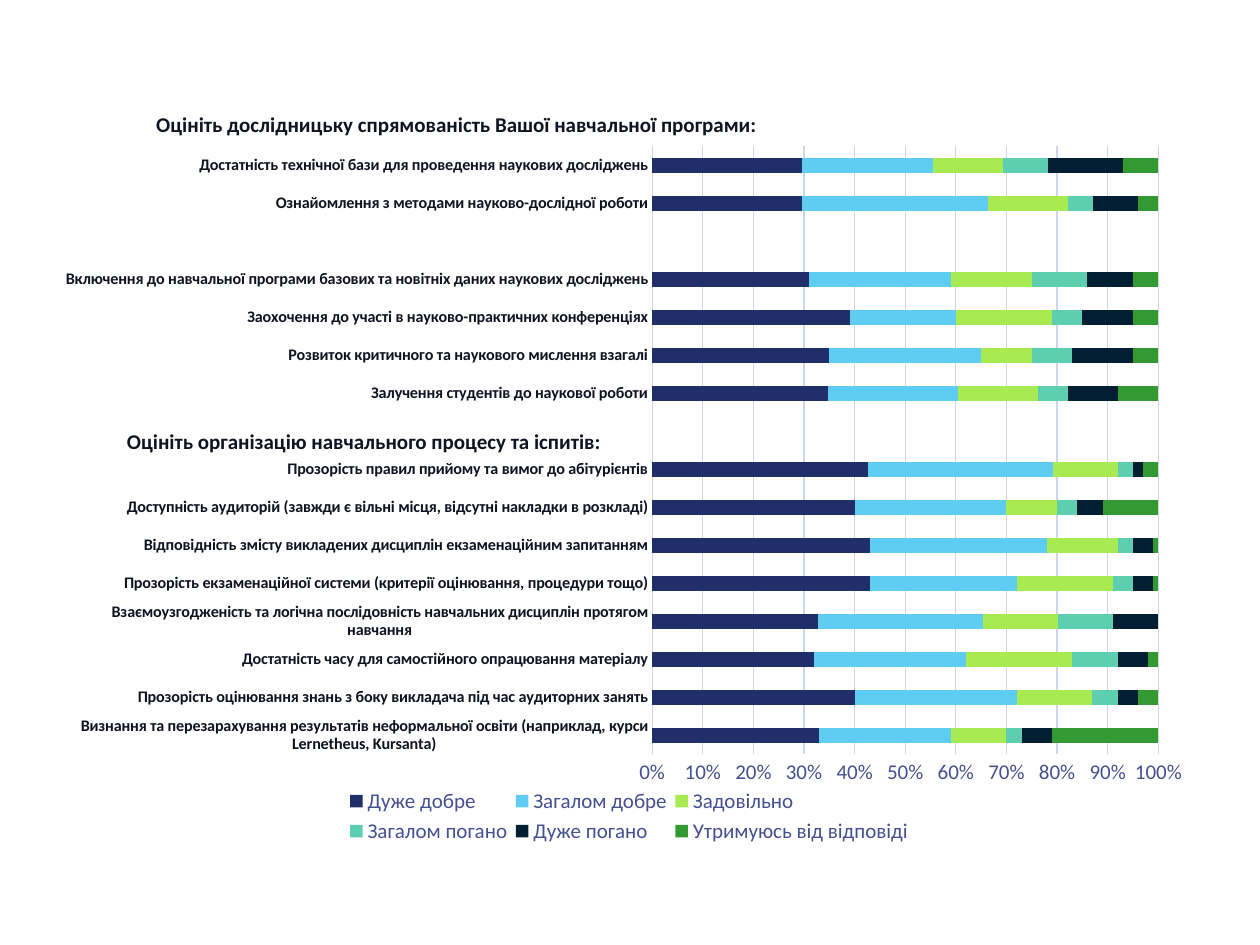
import pptx
import pptx.chart.data
import pptx.dml.color
import pptx.enum.chart
import pptx.oxml
import pptx.oxml.ns
import pptx.util

Cm = pptx.util.Cm
Pt = pptx.util.Pt
INK, MUTED, GRID = "101322", "44508F", "D0D4E9"


def color(hex_value):
    return pptx.dml.color.RGBColor.from_string(hex_value)


def add_text(text, left, top, width, height, size=12, ink=INK, bold=True):
    box = slide.shapes.add_textbox(Cm(left), Cm(top), Cm(width), Cm(height))
    box.text_frame.word_wrap = True
    run = box.text_frame.paragraphs[0].add_run()
    run.text = text
    run.font.name = "Calibri"
    run.font.size = Pt(size)
    run.font.bold = bold
    run.font.color.rgb = color(ink)


deck = pptx.Presentation()
deck.slide_width, deck.slide_height = Cm(25.4), Cm(19.05)
slide = deck.slides.add_slide(deck.slide_layouts[6])

# Questions run from the bottom of the chart to the top; empty ones separate groups
questions = [
    "Визнання та перезарахування результатів неформальної освіти (наприклад, курси Lernetheus, Kursanta)",
    "Прозорість оцінювання знань з боку викладача під час аудиторних занять",
    "Достатність часу для самостійного опрацювання матеріалу",
    "Взаємоузгодженість та логічна послідовність навчальних дисциплін протягом навчання",
    "Прозорість екзаменаційної системи (критерії оцінювання, процедури тощо)",
    "Відповідність змісту викладених дисциплін екзаменаційним запитанням",
    "Доступність аудиторій (завжди є вільні місця, відсутні накладки в розкладі)",
    "Прозорість правил прийому та вимог до абітурієнтів",
    "",
    "Залучення студентів до наукової роботи",
    "Розвиток критичного та наукового мислення взагалі",
    "Заохочення до участі в науково-практичних конференціях",
    "Включення до навчальної програми базових та новітніх даних наукових досліджень",
    "",
    "Ознайомлення з методами науково-дослідної роботи",
    "Достатність технічної бази для проведення наукових досліджень",
]
answers = [
    ("Дуже добре", "202F6A",
     [33, 40, 32, 33, 43, 43, 40, 43, None, 35, 35, 39, 31, None, 30, 30]),
    ("Загалом добре", "5ECCF3",
     [26, 32, 30, 33, 29, 35, 30, 37, None, 26, 30, 21, 28, None, 37, 26]),
    ("Задовільно", "A7EA52",
     [11, 15, 21, 15, 19, 14, 10, 13, None, 16, 10, 19, 16, None, 16, 14]),
    ("Загалом погано", "5DCEAF",
     [3, 5, 9, 11, 4, 3, 4, 3, None, 6, 8, 6, 11, None, 5, 9]),
    ("Дуже погано", "021E32",
     [6, 4, 6, 9, 4, 4, 5, 2, None, 10, 12, 10, 9, None, 9, 15]),
    ("Утримуюсь від відповіді", "339933",
     [21, 4, 2, 0, 1, 1, 11, 3, None, 8, 5, 5, 5, None, 4, 7]),
]
survey = pptx.chart.data.CategoryChartData()
survey.categories = questions
for answer, _, shares in answers:
    survey.add_series(answer, shares)

chart = slide.shapes.add_chart(
    pptx.enum.chart.XL_CHART_TYPE.BAR_STACKED_100,
    Cm(1.09), Cm(2.51), Cm(23.19), Cm(14.6), survey).chart
chart.has_title = False
chart.font.name = "Calibri"
chart.font.size = Pt(10)
chart.font.color.rgb = color(INK)

bars = chart.plots[0]
bars.gap_width, bars.overlap = 150, 100
bars.vary_by_categories = False
for series, (_, fill, _) in zip(bars.series, answers):
    series.format.fill.solid()
    series.format.fill.fore_color.rgb = color(fill)
    series.invert_if_negative = False

question_axis, percent_axis = chart.category_axis, chart.value_axis
chart.has_legend = True
legend = chart.legend
legend.position = pptx.enum.chart.XL_LEGEND_POSITION.BOTTOM
legend.include_in_layout = False

for part, size, ink, bold in [
    (question_axis.tick_labels, 9.2, INK, True),
    (percent_axis.tick_labels, 12, MUTED, False),
    (legend, 12, MUTED, False),
]:
    part.font.name = "Calibri"
    part.font.size = Pt(size)
    part.font.bold = bold
    part.font.color.rgb = color(ink)

for axis in (question_axis, percent_axis):
    axis.major_tick_mark = pptx.enum.chart.XL_TICK_MARK.NONE
    axis.minor_tick_mark = pptx.enum.chart.XL_TICK_MARK.NONE
percent_axis.has_major_gridlines = True
for line in (question_axis.format.line, percent_axis.major_gridlines.format.line):
    line.color.rgb = color(GRID)
    line.width = Pt(0.75)
percent_axis.format.line.fill.background()
percent_axis.minimum_scale, percent_axis.maximum_scale = 0, 1
percent_axis.major_unit = 0.1
percent_axis.tick_labels.number_format = "0%"
percent_axis.tick_labels.number_format_is_linked = False

# Fixed places for the plot and the legend, as fractions of the chart
plot_area = chart.plots[0]._element.getparent()
for owner, target, (x, y, w, h) in [
    (plot_area, '<c:layoutTarget val="inner"/>', (0.52, 0.03, 0.44, 0.84)),
    (legend._element, "", (0.25, 0.91, 0.5, 0.09)),
]:
    for old in owner.findall(pptx.oxml.ns.qn("c:layout")):
        owner.remove(old)
    layout = pptx.oxml.parse_xml(
        f'<c:layout {pptx.oxml.ns.nsdecls("c")}><c:manualLayout>{target}'
        '<c:xMode val="edge"/><c:yMode val="edge"/>'
        f'<c:x val="{x}"/><c:y val="{y}"/><c:w val="{w}"/><c:h val="{h}"/>'
        '</c:manualLayout></c:layout>')
    owner.insert(0 if owner is plot_area else 1, layout)

add_text("Оцініть організацію навчального процесу та іспитів:", 2.31, 8.51, 10.21, 0.76)
add_text("Оцініть дослідницьку спрямованість Вашої навчальної програми:", 2.9, 2.13, 15.01, 0.76)

deck.save("out.pptx")
